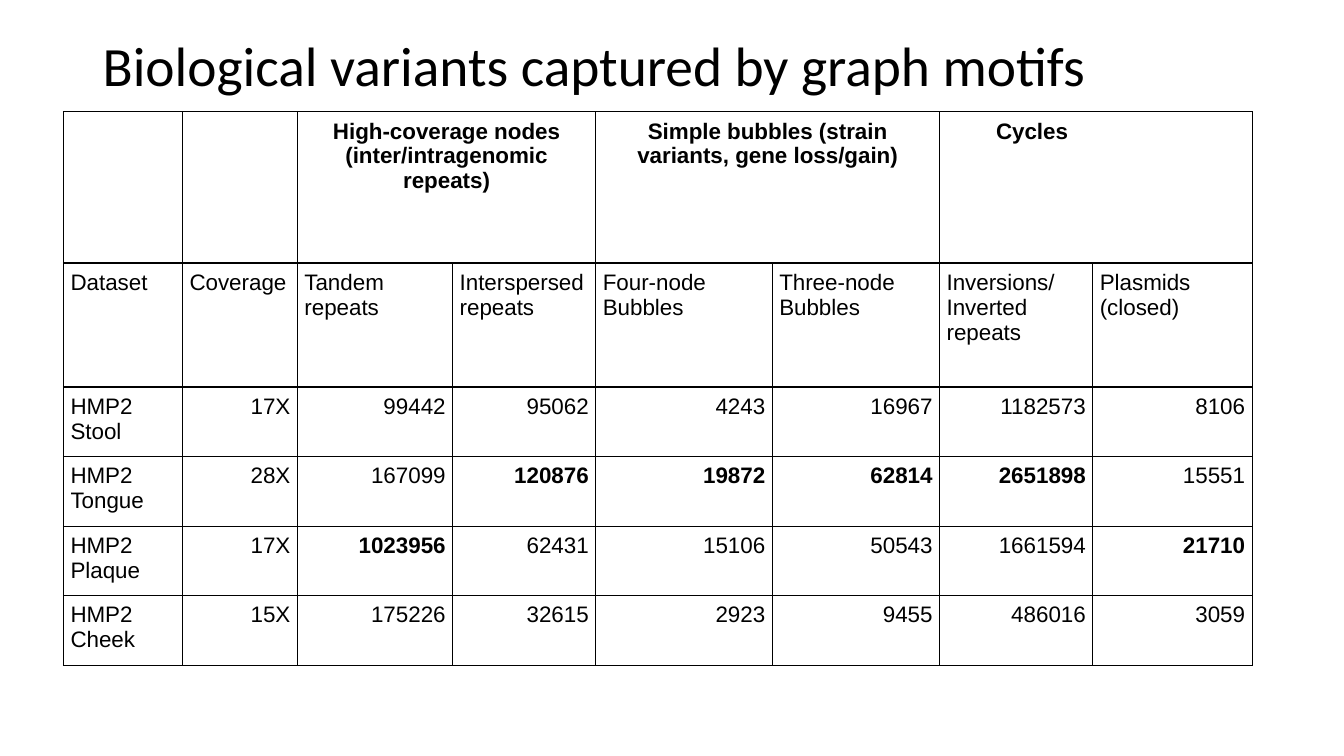
import pptx
import pptx.util
import pptx.dml.color
import pptx.enum.text
import pptx.oxml
import pptx.oxml.ns

Inches = pptx.util.Inches
ALIGN = pptx.enum.text.PP_ALIGN
ANCHOR = pptx.enum.text.MSO_ANCHOR

COLORS = {"ink": "000000", "paper": "FFFFFF"}
TITLE = "Biological variants captured by graph motifs"
# Each group spans two columns: first column, label, alignment, left margin
GROUPS = [
    (2, "High-coverage nodes (inter/intragenomic repeats)", ALIGN.CENTER, 0.07),
    (4, "Simple bubbles (strain variants, gene loss/gain)", ALIGN.CENTER, 0.07),
    (6, "Cycles", ALIGN.LEFT, 0.56),
]
HEADS = ["Dataset", "Coverage", "Tandem repeats", "Interspersed repeats",
         "Four-node\nBubbles", "Three-node\nBubbles",
         "Inversions/\nInverted repeats", "Plasmids (closed)"]
DATA = [
    ("HMP2 Stool", "17X", 99442, 95062, 4243, 16967, 1182573, 8106),
    ("HMP2 Tongue", "28X", 167099, 120876, 19872, 62814, 2651898, 15551),
    ("HMP2 Plaque", "17X", 1023956, 62431, 15106, 50543, 1661594, 21710),
    ("HMP2 Cheek", "15X", 175226, 32615, 2923, 9455, 486016, 3059),
]
WIDTHS = [1.18, 1.14, 1.54, 1.42, 1.75, 1.66, 1.52, 1.58]
HEIGHTS = [1.5, 1.23] + [0.69] * len(DATA)
LEFT, TOP, PAD = 0.63, 1.11, 0.07


def color(name):
    return pptx.dml.color.RGBColor.from_string(COLORS[name])


def write(frame, text, font="Arial", size=16, bold=False,
          align=ALIGN.LEFT, spacing=1.0):
    frame.word_wrap = True
    for i, line in enumerate(text.split("\n")):
        para = frame.add_paragraph() if i else frame.paragraphs[0]
        para.alignment = align
        para.line_spacing = spacing
        run = para.add_run()
        run.text = line
        run.font.name = font
        run.font.size = pptx.util.Pt(size)
        run.font.bold = bold
        run.font.color.rgb = color("ink")


def frame_cell(cell):
    """Set margins, a clear fill and a thin line on all four sides."""
    cell.margin_left = cell.margin_right = Inches(PAD)
    cell.margin_top = cell.margin_bottom = Inches(PAD)
    cell.fill.background()
    props = cell._tc.get_or_add_tcPr()
    for i, side in enumerate("LRTB"):
        props.insert(i, pptx.oxml.parse_xml(
            f'<a:ln{side} {pptx.oxml.ns.nsdecls("a")} w="12700"><a:solidFill>'
            f'<a:srgbClr val="{COLORS["ink"]}"/></a:solidFill></a:ln{side}>'))


def add_title(slide):
    box = slide.shapes.add_textbox(
        Inches(0.92), Inches(0.4), Inches(11.5), Inches(0.55))
    box.text_frame.vertical_anchor = ANCHOR.MIDDLE
    write(box.text_frame, TITLE, font="Calibri", size=39.6, spacing=0.9)


def add_grid(slide):
    table = slide.shapes.add_table(
        len(HEIGHTS), len(WIDTHS), Inches(LEFT), Inches(TOP),
        Inches(sum(WIDTHS)), Inches(sum(HEIGHTS))).table
    table.first_row = table.horz_banding = False
    for col, width in zip(table.columns, WIDTHS):
        col.width = Inches(width)
    for row, height in zip(table.rows, HEIGHTS):
        row.height = Inches(height)
    for cell in table.iter_cells():
        frame_cell(cell)

    for c, label, align, margin in GROUPS:
        cell = table.cell(0, c)
        cell.merge(table.cell(0, c + 1))
        cell.margin_left = Inches(margin)
        write(cell.text_frame, label, bold=True, align=align)
    for c, (head, *values) in enumerate(zip(HEADS, *DATA)):
        write(table.cell(1, c).text_frame, head)
        for r, value in enumerate(values, 2):
            # The highest count in each column is bold
            write(table.cell(r, c).text_frame, str(value),
                  bold=c > 1 and value == max(values),
                  align=ALIGN.RIGHT if c else ALIGN.LEFT)


def main():
    deck = pptx.Presentation()
    deck.slide_width, deck.slide_height = Inches(13.33), Inches(7.5)
    slide = deck.slides.add_slide(deck.slide_layouts[6])
    slide.background.fill.solid()
    slide.background.fill.fore_color.rgb = color("paper")
    add_title(slide)
    add_grid(slide)
    deck.save("out.pptx")


if __name__ == "__main__":
    main()
